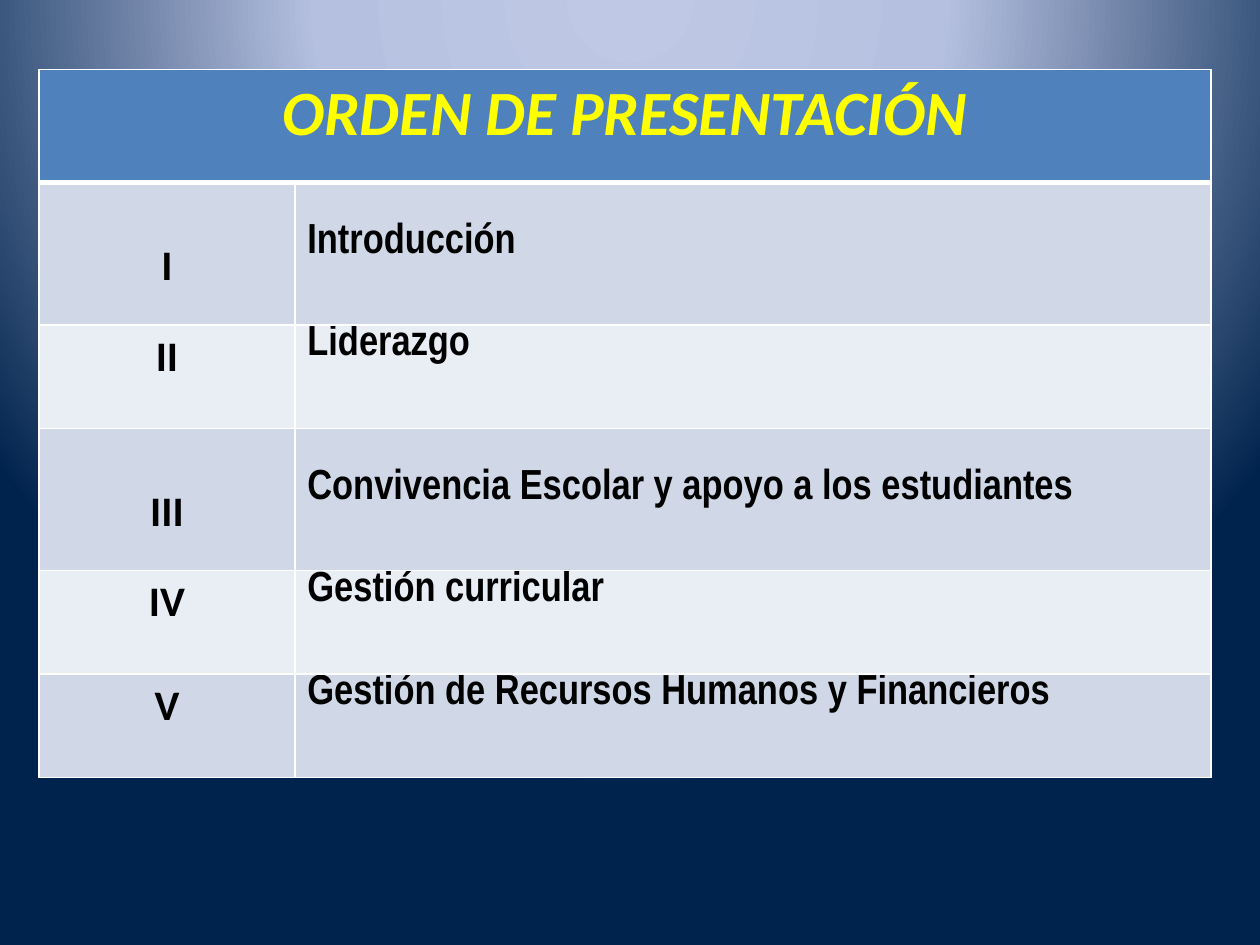
from lxml.etree import SubElement
from pptx import Presentation
from pptx.dml.color import RGBColor
from pptx.enum.text import PP_ALIGN
from pptx.oxml import parse_xml
from pptx.oxml.ns import nsdecls, qn
from pptx.util import Inches, Pt

COLORS = {
    "header": "4F81BD", "odd": "D0D8E8", "even": "E9EDF4", "border": "FFFFFF",
    "title": "FFFF00", "text": "000000",
    "glow": "BFC9E5", "halo": "B5C0E0", "night": "00234D",
}
TOPICS = [
    ("I", "Introducción"),
    ("II", "Liderazgo"),
    ("III", "Convivencia Escolar y apoyo a los estudiantes"),
    ("IV", "Gestión curricular"),
    ("V", "Gestión de Recursos Humanos y Financieros"),
]
LOWERED = ("I", "III")  # topics whose text starts one line further down
HEADER_H, TALL_H, ROW_H = 0.9, 1.13, 0.82
COL_WIDTHS = (2.03, 7.27)


class Deck:
    def __init__(self, prs):
        self.s = prs.slides.add_slide(prs.slide_layouts[6])

    def background(self, stops):
        """Fill the background with a circular gradient centred above the slide."""
        fill = self.s.background.fill
        fill.solid()
        solid = next(self.s._element.iter(qn("a:solidFill")))
        gs = "".join(f'<a:gs pos="{pos * 1000}"><a:srgbClr val="{COLORS[name]}"/></a:gs>'
                     for pos, name in stops)
        grad = parse_xml(
            f'<a:gradFill {nsdecls("a")} rotWithShape="1"><a:gsLst>{gs}</a:gsLst>'
            '<a:path path="circle"><a:fillToRect l="50000" t="-80000" r="50000" b="180000"/>'
            '</a:path></a:gradFill>')
        solid.getparent().replace(solid, grad)

    def table(self, left, top, widths, heights):
        frame = self.s.shapes.add_table(
            len(heights), len(widths), Inches(left), Inches(top),
            Inches(sum(widths)), Inches(sum(heights)))
        tbl = frame.table
        tbl.first_row = tbl.horz_banding = False
        for col, width in zip(tbl.columns, widths):
            col.width = Inches(width)
        for row, height in zip(tbl.rows, heights):
            row.height = Inches(height)
        return tbl

    def borders(self, cell, top=1, bottom=1):
        tcPr = cell._tc.get_or_add_tcPr()
        for i, (side, width) in enumerate(zip("LRTB", (1, 1, top, bottom))):
            ln = SubElement(tcPr, qn(f"a:ln{side}"), w=str(Pt(width)))
            SubElement(SubElement(ln, qn("a:solidFill")), qn("a:srgbClr"),
                       val=COLORS["border"])
            tcPr.insert(i, ln)

    def cell(self, cell, text, fill, font, size=24, color="text", italic=False,
             align=PP_ALIGN.CENTER, margin_top=0.05):
        cell.fill.solid()
        cell.fill.fore_color.rgb = RGBColor.from_string(COLORS[fill])
        cell.margin_top = Inches(margin_top)
        p = cell.text_frame.paragraphs[0]
        p.text = text
        p.alignment = align
        p.font.name, p.font.size = font, Pt(size)
        p.font.bold, p.font.italic = True, italic
        p.font.color.rgb = RGBColor.from_string(COLORS[color])


def main():
    prs = Presentation()
    prs.slide_width, prs.slide_height = Inches(10), Inches(7.5)
    deck = Deck(prs)
    deck.background([(0, "glow"), (40, "halo"), (100, "night")])

    heights = [HEADER_H] + [TALL_H if num in LOWERED else ROW_H for num, _ in TOPICS]
    tbl = deck.table(0.31, 0.55, COL_WIDTHS, heights)
    tbl.cell(0, 0).merge(tbl.cell(0, 1))
    deck.cell(tbl.cell(0, 0), "ORDEN DE PRESENTACIÓN", "header", "Calibri",
              size=36, color="title", italic=True)
    for i, (num, topic) in enumerate(TOPICS, start=1):
        fill = "odd" if i % 2 else "even"
        low = num in LOWERED
        deck.cell(tbl.cell(i, 0), num, fill, "Calibri", margin_top=0.46 if low else 0.05)
        deck.cell(tbl.cell(i, 1), topic, fill, "Arial Narrow", align=PP_ALIGN.LEFT,
                  margin_top=0.32 if low else 0)
    for i, row in enumerate(tbl.rows):
        for cell in row.cells:
            deck.borders(cell, top=3 if i == 1 else 1, bottom=3 if i == 0 else 1)

    prs.save("out.pptx")


if __name__ == "__main__":
    main()
